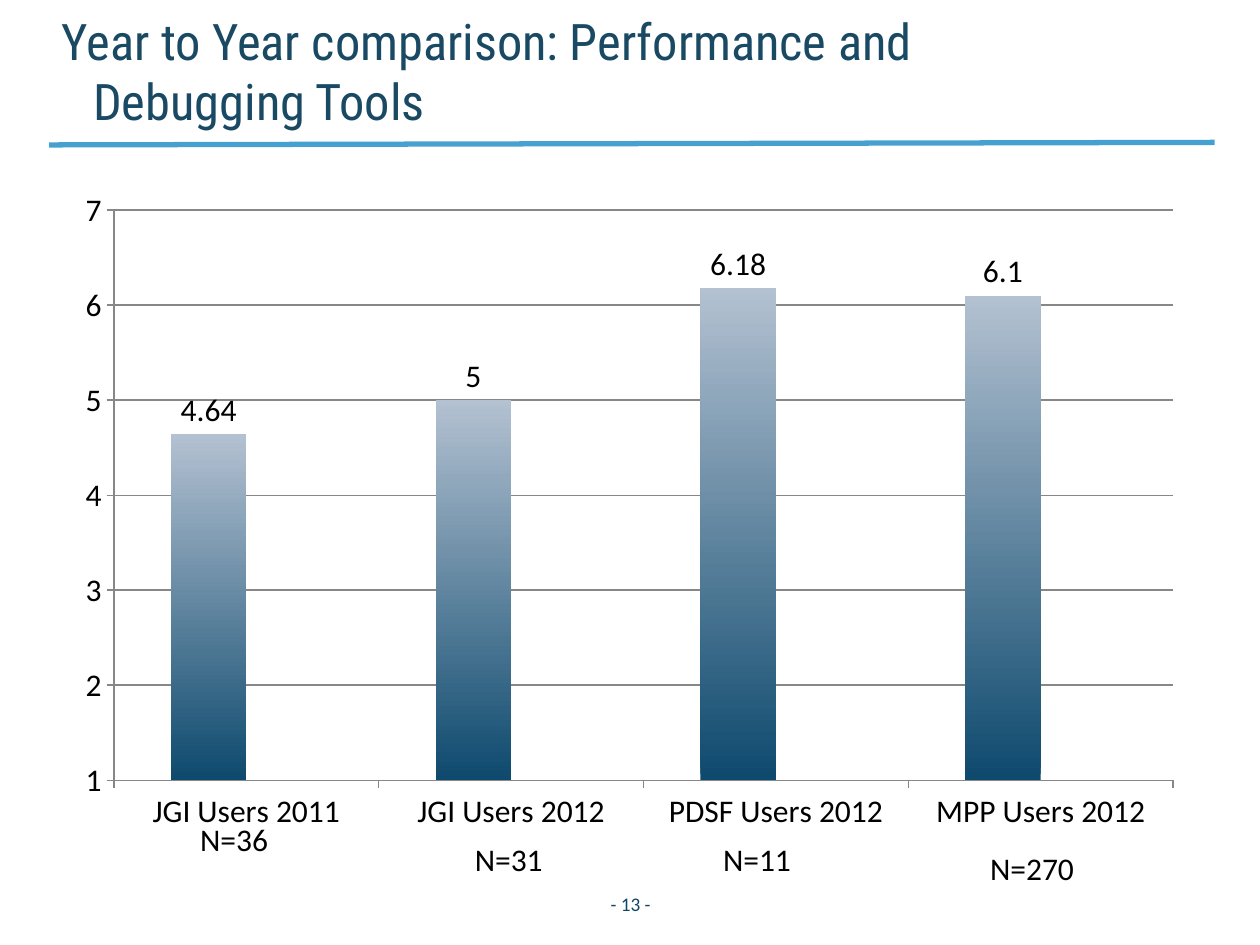
from lxml import etree
from pptx import Presentation
from pptx import util as u
from pptx.chart.data import CategoryChartData
from pptx.dml.color import RGBColor
from pptx.enum import chart as charts, shapes, text
from pptx.oxml import parse_xml
from pptx.oxml.ns import nsdecls, qn

TITLE = "Year to Year comparison: Performance and Debugging Tools"
PAGE_NUMBER = "- 13 -"
RATINGS = {
    "JGI Users 2011": 4.64,
    "JGI Users 2012": 5,
    "PDSF Users 2012": 6.18,
    "MPP Users 2012": 6.1,
}
# sample size, (left, top, width, height)
SAMPLES = [
    ("N=36", (1.49, 6.46, 0.75, 0.4)),
    ("N=31", (3.67, 6.62, 0.75, 0.4)),
    ("N=11", (5.64, 6.62, 0.75, 0.4)),
    ("N=270", (7.76, 6.69, 0.87, 0.4)),
]
CHART_BOX = (0.5, 1.42, 9, 5.28)
PLOT_BOX = (0.905, 1.667, 8.41, 4.523)


class Theme:
    heading, body = "Roboto Condensed", "Calibri"
    title_size, label_size, page_size = 28.8, 18, 11
    title, page, ink = "194963", "114766", "000000"
    rule, grid, empty = "46A0D0", "878787", "FCD235"
    bar_bottom, bar_top = "0E4A6E", "B3C1D1"


def rgb(value):
    return RGBColor.from_string(value)


def inches(box):
    return [u.Inches(value) for value in box]


def style_font(font, face=Theme.body, size=Theme.label_size, color=Theme.ink):
    font.name, font.size, font.bold = face, u.Pt(size), False
    font.color.rgb = rgb(color)


def write(shape, content, align=text.PP_ALIGN.LEFT, anchor=text.MSO_ANCHOR.TOP,
          wrap=True, fit=text.MSO_AUTO_SIZE.NONE, **font):
    frame = shape.text_frame
    frame.text = content
    frame.word_wrap, frame.auto_size, frame.vertical_anchor = wrap, fit, anchor
    paragraph = frame.paragraphs[0]
    paragraph.alignment = align
    style_font(paragraph.runs[0].font, **font)
    return frame


def add_title(slide):
    title = slide.shapes.title
    title.left, title.top, title.width, title.height = inches((0.39, 0.2, 7.46, 0.84))
    frame = write(title, TITLE, anchor=text.MSO_ANCHOR.BOTTOM, face=Theme.heading,
                  size=Theme.title_size, color=Theme.title)
    frame.margin_top = frame.margin_bottom = 0
    hanging = u.Inches(0.25)
    properties = frame.paragraphs[0]._p.get_or_add_pPr()
    properties.set("marL", str(hanging))
    properties.set("indent", str(-hanging))


def add_rule(slide):
    rule = slide.shapes.add_connector(
        shapes.MSO_CONNECTOR.STRAIGHT, *inches((0.39, 1.15, 9.64, 1.13)))
    rule.line.color.rgb = rgb(Theme.rule)
    rule.line.width = u.Pt(3)
    etree.SubElement(rule._element.spPr, qn("a:effectLst"))


def pin_plot_area(chart):
    """Fix the inner plot area at PLOT_BOX."""
    left, top, width, height = CHART_BOX
    x, y, w, h = PLOT_BOX
    parts = {"x": (x - left) / width, "y": (y - top) / height,
             "w": w / width, "h": h / height}
    values = "".join(f'<c:{key} val="{value:.3f}"/>' for key, value in parts.items())
    plot_area = chart._chartSpace.chart.plotArea
    for layout in plot_area.findall(qn("c:layout")):
        plot_area.remove(layout)
    plot_area.insert(0, parse_xml(
        f'<c:layout {nsdecls("c")}><c:manualLayout><c:layoutTarget val="inner"/>'
        f'<c:xMode val="edge"/><c:yMode val="edge"/>{values}'
        "</c:manualLayout></c:layout>"))


def add_ratings_chart(slide):
    data = CategoryChartData()
    data.categories = list(RATINGS)
    data.add_series("Series 1", list(RATINGS.values()))
    data.add_series("Series 2", [None] * len(RATINGS))
    chart = slide.shapes.add_chart(
        charts.XL_CHART_TYPE.COLUMN_CLUSTERED, *inches(CHART_BOX), data).chart
    chart.has_legend = chart.has_title = False
    style_font(chart.font)
    pin_plot_area(chart)

    for axis in (chart.category_axis, chart.value_axis):
        axis.major_tick_mark = charts.XL_TICK_MARK.OUTSIDE
        axis.minor_tick_mark = charts.XL_TICK_MARK.NONE
        axis.format.line.color.rgb = rgb(Theme.grid)
    scale = chart.value_axis
    scale.minimum_scale, scale.maximum_scale, scale.major_unit = 1, 7, 1
    scale.has_major_gridlines = True
    scale.major_gridlines.format.line.color.rgb = rgb(Theme.grid)

    plot = chart.plots[0]
    plot.gap_width, plot.overlap, plot.vary_by_categories = 150, 0, False
    ratings, empty = plot.series
    fill = ratings.format.fill
    fill.gradient()
    fill.gradient_angle = 90
    for stop, color in zip(fill.gradient_stops, (Theme.bar_bottom, Theme.bar_top)):
        stop.color.rgb = rgb(color)
    empty.format.fill.solid()
    empty.format.fill.fore_color.rgb = rgb(Theme.empty)

    labels = ratings.data_labels
    labels.show_value = True
    labels.position = charts.XL_LABEL_POSITION.OUTSIDE_END
    style_font(labels.font)


def main():
    deck = Presentation()
    deck.slide_width, deck.slide_height = u.Inches(10), u.Inches(7.5)
    slide = deck.slides.add_slide(deck.slide_layouts.get_by_name("Title Only"))
    add_rule(slide)
    add_title(slide)
    add_ratings_chart(slide)
    write(slide.shapes.add_textbox(*inches((4.5, 6.97, 1.01, 0.4))), PAGE_NUMBER,
          align=text.PP_ALIGN.CENTER, anchor=text.MSO_ANCHOR.MIDDLE,
          size=Theme.page_size, color=Theme.page)
    for sample, box in SAMPLES:
        write(slide.shapes.add_textbox(*inches(box)), sample, wrap=False,
              fit=text.MSO_AUTO_SIZE.SHAPE_TO_FIT_TEXT)
    deck.save("out.pptx")


if __name__ == "__main__":
    main()
